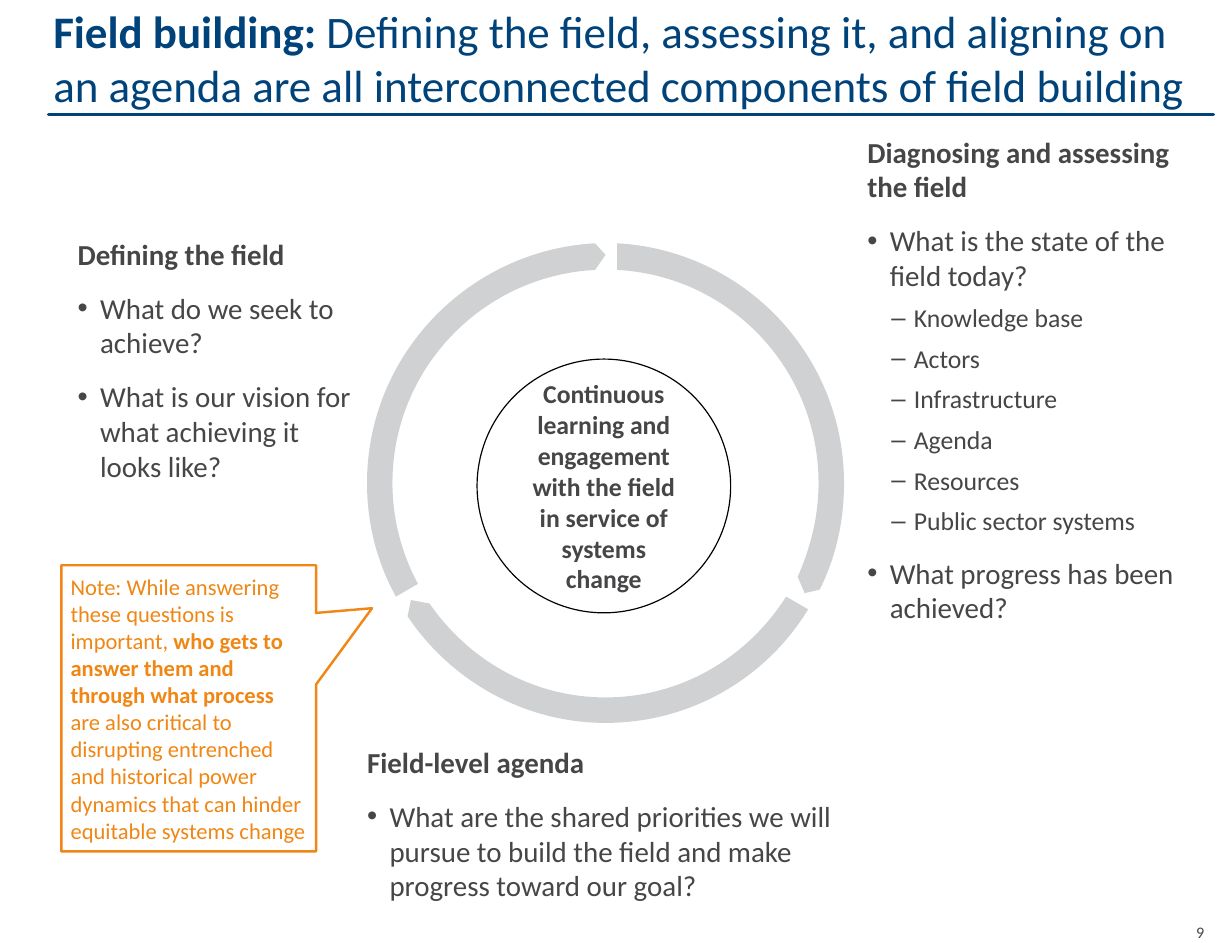
"""Build the field building slide: a ring of arrows with three question lists."""
from dataclasses import dataclass

from lxml import etree
from pptx import Presentation
from pptx import util as u
from pptx.dml.color import RGBColor
from pptx.enum import shapes, text
from pptx.oxml.ns import qn

PX = 9144
NAVY, GRAY, ORANGE = "00437A", "464547", "F08613"
SILVER, WHITE, BLACK = "D0D1D3", "FFFFFF", "000000"
HANG = 14
Point = tuple[int, int]


@dataclass(frozen=True)
class Span:
    text: str
    bold: bool = False


@dataclass(frozen=True)
class Style:
    size: int
    bullet: str = ""
    margin: int = 0
    before: int = 0
    level: int = 0
    bold: bool = False


@dataclass(frozen=True)
class Panel:
    slot: int
    bounds: tuple[int, int, int, int]
    lines: tuple[tuple[Style, str], ...]


@dataclass(frozen=True)
class RingArrow:
    start: Point
    segments: tuple[tuple[Point, ...], ...]


HEADING = Style(18, bold=True)
QUESTION = Style(18, "•", HANG, 12)
TOPIC = Style(16, "–", 29, 6, 1)
TOPICS = ("Knowledge base", "Actors", "Infrastructure", "Agenda", "Resources", "Public sector systems")

PANELS = (
    Panel(2, (749, 110, 288, 435), (
        (HEADING, "Diagnosing and assessing the field"),
        (QUESTION, "What is the state of the field today?"),
        *((TOPIC, topic) for topic in TOPICS),
        (QUESTION, "What progress has been achieved?"),
    )),
    Panel(1, (67, 199, 241, 223), (
        (HEADING, "Defining the field"),
        (QUESTION, "What do we seek to achieve?"),
        (QUESTION, "What is our vision for what achieving it looks like?"),
    )),
    Panel(3, (317, 638, 420, 146), (
        (HEADING, "Field-level agenda"),
        (QUESTION, "What are the shared priorities we will pursue to build the field "
                   "and make progress toward our goal?"),
    )),
)
RING = (
    RingArrow((339, 417), (
        ((339, 318), (417, 238), (514, 233)), ((523, 220),), ((514, 210),),
        ((405, 216), (317, 306), (317, 417)), ((317, 453), (326, 486), (342, 515)),
        ((361, 504),), ((347, 478), (339, 448), (339, 417)),
    )),
    RingArrow((523, 602), (
        ((460, 602), (405, 570), (371, 521)), ((355, 518),), ((352, 532),),
        ((389, 587), (452, 624), (523, 624)), ((597, 624), (662, 585), (698, 526)),
        ((679, 515),), ((646, 567), (589, 602), (523, 602)),
    )),
    RingArrow((707, 417), (
        ((707, 446), (700, 473), (689, 498)), ((695, 512),), ((708, 509),),
        ((722, 481), (729, 450), (729, 417)), ((729, 306), (642, 216), (533, 210)),
        ((533, 233),), ((630, 238), (707, 318), (707, 417)),
    )),
)
TITLE = (
    Span("Field building: ", True),
    Span("Defining the field, assessing it, and aligning on an agenda "
         "are all interconnected components of field building"),
)
NOTE = (
    Span("Note: While answering these questions is important, "),
    Span("who gets to answer them and through what process ", True),
    Span("are also critical to disrupting entrenched and historical power "
         "dynamics that can hinder equitable systems change"),
)


def color(hex_value: str) -> RGBColor:
    return RGBColor.from_string(hex_value)


def emu(*lengths: int) -> list[int]:
    return [length * PX for length in lengths]


def place(box, bounds: tuple[int, int, int, int]) -> None:
    box.left, box.top, box.width, box.height = emu(*bounds)


def set_frame(box, insets: tuple[int, int, int, int], anchor=text.MSO_ANCHOR.MIDDLE, wrap: bool = True):
    frame = box.text_frame
    frame.word_wrap = wrap
    frame.auto_size = text.MSO_AUTO_SIZE.NONE
    frame.vertical_anchor = anchor
    frame.margin_left, frame.margin_top, frame.margin_right, frame.margin_bottom = emu(*insets)
    return frame


def format_span(span, size: int, hex_value: str, bold: bool) -> None:
    span.font.name = "Calibri"
    span.font.size = u.Pt(size)
    span.font.bold = bold
    span.font.color.rgb = color(hex_value)


def write_spans(para, spans: tuple[Span, ...], size: int, hex_value: str, align=text.PP_ALIGN.LEFT) -> None:
    para.alignment = align
    para.space_before = u.Pt(0)
    for item in spans:
        span = para.add_run()
        span.text = item.text
        format_span(span, size, hex_value, item.bold)


def write_line(para, style: Style, line: str) -> None:
    para.text = line
    para.level = style.level
    para.alignment = text.PP_ALIGN.LEFT
    para.space_before = u.Pt(style.before)
    properties = para._p.get_or_add_pPr()
    properties.set("marL", str(u.Pt(style.margin)))
    properties.set("indent", str(u.Pt(-HANG if style.bullet else 0)))
    if style.bullet:
        etree.SubElement(properties, qn("a:buChar")).set("char", style.bullet)
    else:
        etree.SubElement(properties, qn("a:buNone"))
    format_span(para.runs[0], style.size, GRAY, style.bold)


def fill_panel(page, panel: Panel) -> None:
    box = page.placeholders[panel.slot]
    place(box, panel.bounds)
    frame = set_frame(box, (0, 4, 4, 4))
    for index, (style, line) in enumerate(panel.lines):
        para = frame.add_paragraph() if index else frame.paragraphs[0]
        write_line(para, style, line)


def paint(shape, fill: str, line: str = "", width: float = 0) -> None:
    shape.shadow.inherit = False
    shape.fill.solid()
    shape.fill.fore_color.rgb = color(fill)
    if line:
        shape.line.color.rgb = color(line)
        shape.line.width = u.Pt(width)
    else:
        shape.line.fill.background()


def add_ring_arrow(page, arrow: RingArrow) -> None:
    builder = page.shapes.build_freeform(*arrow.start, scale=PX)
    builder.add_line_segments([point for segment in arrow.segments for point in segment], close=True)
    shape = builder.convert_to_shape()
    steps = iter(list(shape._element.iter(qn("a:lnTo"))))
    for segment in arrow.segments:
        group = [next(steps) for _ in segment]
        if len(group) == 3:
            curve = etree.Element(qn("a:cubicBezTo"))
            group[0].addprevious(curve)
            for step in group:
                curve.append(step[0])
                step.getparent().remove(step)
    paint(shape, SILVER)


def add_title(page) -> None:
    rule = page.shapes.add_connector(shapes.MSO_CONNECTOR.STRAIGHT, *emu(42, 99, 1048, 99))
    rule.line.color.rgb = color(NAVY)
    rule.line.width = u.Pt(2.25)
    rule._element.spPr.find(qn("a:ln")).set("cap", "rnd")
    etree.SubElement(rule._element.spPr, qn("a:effectLst"))
    title = page.shapes.title
    place(title, (42, 0, 1006, 104))
    frame = set_frame(title, (4, 4, 4, 8), text.MSO_ANCHOR.BOTTOM)
    write_spans(frame.paragraphs[0], TITLE, 28, NAVY)


def add_hub(page) -> None:
    hub = page.shapes.add_shape(shapes.MSO_SHAPE.OVAL, *emu(412, 310, 219, 219))
    paint(hub, WHITE, BLACK, 0.75)
    message = Span("Continuous learning and engagement with the field in service of systems change", True)
    write_spans(set_frame(hub, (10, 5, 10, 5)).paragraphs[0], (message,), 16, GRAY, text.PP_ALIGN.CENTER)


def add_note(page) -> None:
    note = page.shapes.add_shape(shapes.MSO_SHAPE.RECTANGULAR_CALLOUT, *emu(53, 488, 220, 247))
    note.adjustments[0], note.adjustments[1] = 0.72, -0.35
    paint(note, WHITE, ORANGE, 1.5)
    write_spans(set_frame(note, (8, 8, 8, 8)).paragraphs[0], NOTE, 14, ORANGE)


def add_page_number(page) -> None:
    number = page.shapes.add_shape(shapes.MSO_SHAPE.ROUNDED_RECTANGLE, *emu(1024, 796, 16, 17))
    number.adjustments[0] = 0
    paint(number, WHITE)
    frame = set_frame(number, (0, 0, 0, 0), wrap=False)
    write_spans(frame.paragraphs[0], (Span("9"),), 10, GRAY, text.PP_ALIGN.RIGHT)


def main() -> None:
    deck = Presentation()
    deck.slide_width, deck.slide_height = emu(1064, 814)
    page = deck.slides.add_slide(deck.slide_layouts.get_by_name("Comparison"))
    add_page_number(page)
    add_title(page)
    for panel in PANELS:
        fill_panel(page, panel)
    spare = page.placeholders[4]._element
    spare.getparent().remove(spare)
    add_hub(page)
    for arrow in RING:
        add_ring_arrow(page, arrow)
    add_note(page)
    deck.save("out.pptx")


if __name__ == "__main__":
    main()
